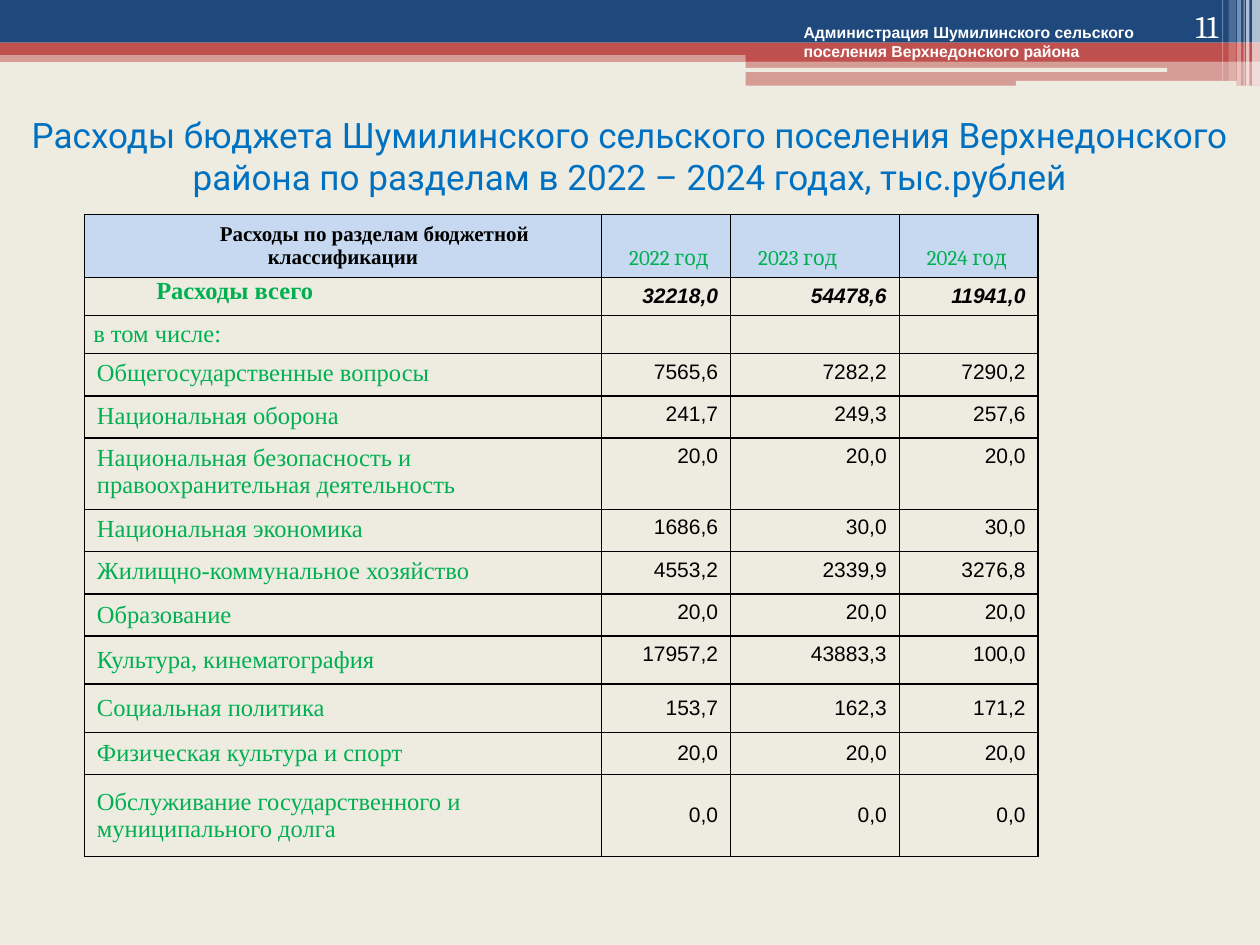
from lxml.etree import SubElement
from pptx import Presentation
from pptx.dml.color import RGBColor
from pptx.enum.shapes import MSO_SHAPE
from pptx.enum.text import MSO_ANCHOR, PP_ALIGN
from pptx.oxml import parse_xml
from pptx.oxml.ns import nsdecls, qn
from pptx.util import Cm, Pt

NAVY = RGBColor(0x1F, 0x49, 0x7D)
RED = RGBColor(0xC0, 0x50, 0x4D)
CREAM = RGBColor(0xEE, 0xEC, 0xE1)
WHITE = RGBColor(0xFF, 0xFF, 0xFF)
BLACK = RGBColor(0, 0, 0)
BLUE = RGBColor(0x00, 0x70, 0xC0)
GREEN = RGBColor(0x00, 0xB0, 0x50)
PALE_BLUE = RGBColor(0xC6, 0xD9, 0xF1)

TOP, MIDDLE, BOTTOM = MSO_ANCHOR.TOP, MSO_ANCHOR.MIDDLE, MSO_ANCHOR.BOTTOM
LEFT, CENTER, RIGHT = PP_ALIGN.LEFT, PP_ALIGN.CENTER, PP_ALIGN.RIGHT
RECT, ROUND = MSO_SHAPE.RECTANGLE, MSO_SHAPE.ROUNDED_RECTANGLE
SERIF, SANS = "Times New Roman", "Arial"

TITLE = ("Расходы бюджета Шумилинского сельского поселения Верхнедонского "
         "района по разделам в 2022 – 2024 годах, тыс.рублей")
OWNER = "Администрация Шумилинского сельского поселения Верхнедонского района"
PAGE = "11"

# shape, left, top, width, height (cm), colour, opacity %
BANDS = [
    (RECT, 0, 1.02, 25.4, 0.23, RED, 50),
    (RECT, 0, 0, 25.4, 0.86, NAVY, 100),
    (RECT, 0, 0.86, 25.4, 0.25, RED, 100),
    (RECT, 15.03, 0.99, 10.37, 0.25, RED, 100),
    (RECT, 15.03, 1.23, 10.37, 0.5, RED, 50),
    (ROUND, 15.02, 1.37, 8.51, 0.08, CREAM, 100),
    (ROUND, 20.48, 1.63, 4.45, 0.1, CREAM, 100),
]
# left, width, height (cm), opacity %
STRIPES = [
    (25.24, 0.16, 1.73, 65), (25.12, 0.07, 1.73, 65), (25.07, 0.02, 1.73, 60),
    (24.94, 0.08, 1.73, 40), (24.77, 0.15, 1.63, 20), (24.64, 0.02, 1.63, 30),
]

HEADER = ["Расходы по разделам бюджетной классификации",
          "2022 год", "2023 год", "2024 год"]
TOTAL = ["Расходы всего", "32218,0", "54478,6", "11941,0"]
INCLUDING = "в том числе:"
# row height (cm), label anchor, value anchor, label, values by year
SECTIONS = [
    (0.85, TOP, TOP, "Общегосударственные вопросы", "7565,6", "7282,2", "7290,2"),
    (0.85, TOP, TOP, "Национальная оборона", "241,7", "249,3", "257,6"),
    (1.43, TOP, TOP, "Национальная безопасность и правоохранительная деятельность",
     "20,0", "20,0", "20,0"),
    (0.85, TOP, TOP, "Национальная экономика", "1686,6", "30,0", "30,0"),
    (0.85, TOP, TOP, "Жилищно-коммунальное хозяйство", "4553,2", "2339,9", "3276,8"),
    (0.85, MIDDLE, TOP, "Образование", "20,0", "20,0", "20,0"),
    (0.97, MIDDLE, TOP, "Культура, кинематография", "17957,2", "43883,3", "100,0"),
    (0.97, MIDDLE, MIDDLE, "Социальная политика", "153,7", "162,3", "171,2"),
    (0.85, MIDDLE, MIDDLE, "Физическая культура и спорт", "20,0", "20,0", "20,0"),
    (1.65, MIDDLE, MIDDLE, "Обслуживание государственного и муниципального долга",
     "0,0", "0,0", "0,0"),
]
COL_WIDTHS = [10.43, 2.6, 3.4, 2.8]
ROW_HEIGHTS = [1.27, 0.77, 0.77] + [row[0] for row in SECTIONS]


def write(tf, text, size, font, color, align=LEFT, bold=False, italic=False):
    tf.text = text
    p = tf.paragraphs[0]
    p.alignment = align
    for r in p.runs:
        r.font.size, r.font.name = Pt(size), font
        r.font.bold, r.font.italic = bold, italic
        r.font.color.rgb = color
    return p


def indent(p, left=0, first=0):
    pPr = p._p.get_or_add_pPr()
    pPr.set("marL", str(Cm(left)))
    pPr.set("indent", str(Cm(first)))


def add_band(shapes, kind, left, top, width, height, color, opacity):
    sp = shapes.add_shape(kind, Cm(left), Cm(top), Cm(width), Cm(height))
    sp.shadow.inherit = False
    sp.line.fill.background()
    sp.fill.solid()
    sp.fill.fore_color.rgb = color
    if opacity < 100:
        clr = sp._element.spPr.find(".//" + qn("a:srgbClr"))
        SubElement(clr, qn("a:alpha"), val=str(opacity * 1000))


def add_text(shapes, left, top, width, height, anchor, *style):
    box = shapes.add_textbox(Cm(left), Cm(top), Cm(width), Cm(height))
    tf = box.text_frame
    tf.word_wrap = True
    tf.vertical_anchor = anchor
    write(tf, *style)


def add_borders(cell):
    tcPr = cell._tc.get_or_add_tcPr()
    for i, side in enumerate(("lnL", "lnR", "lnT", "lnB")):
        tcPr.insert(i, parse_xml(
            f'<a:{side} {nsdecls("a")} w="12700"><a:solidFill>'
            f'<a:srgbClr val="{BLACK}"/></a:solidFill></a:{side}>'))


def fill_header(table):
    for c, text in enumerate(HEADER):
        cell = table.cell(0, c)
        cell.fill.solid()
        cell.fill.fore_color.rgb = PALE_BLUE
        if c == 0:
            cell.vertical_anchor = MIDDLE
            p = write(cell.text_frame, text, 12, SERIF, BLACK, CENTER, True)
            indent(p, first=1.27)
        else:
            cell.vertical_anchor = BOTTOM
            p = write(cell.text_frame, text, 12, "Cambria", GREEN)
            p.space_before = Pt(3)
            indent(p, left=0.3)


def fill_row(table, row, label, values, label_anchor, value_anchor, total=False):
    cell = table.cell(row, 0)
    cell.vertical_anchor = label_anchor
    p = write(cell.text_frame, label, 14, SERIF, GREEN, bold=total)
    for c, text in enumerate(values, 1):
        value = table.cell(row, c)
        value.vertical_anchor = value_anchor
        write(value.text_frame, text, 12, SANS, BLACK, RIGHT, total, total)
    return cell, p


def add_budget_table(shapes):
    table = shapes.add_table(len(ROW_HEIGHTS), len(COL_WIDTHS), Cm(1.7), Cm(4.32),
                             Cm(sum(COL_WIDTHS)), Cm(sum(ROW_HEIGHTS))).table
    table.first_row = table.horz_banding = False
    for col, width in zip(table.columns, COL_WIDTHS):
        col.width = Cm(width)
    for row, height in zip(table.rows, ROW_HEIGHTS):
        row.height = Cm(height)
    for cell in table.iter_cells():
        cell.fill.background()
        add_borders(cell)

    fill_header(table)
    total, total_p = fill_row(table, 1, TOTAL[0], TOTAL[1:], TOP, MIDDLE, total=True)
    indent(total_p, first=1.27)
    including, including_p = fill_row(table, 2, INCLUDING, [], MIDDLE, MIDDLE)
    including_p.space_after = Pt(6)
    for cell in (total, including):
        cell.margin_left = cell.margin_right = Cm(0.18)
        cell.margin_top = cell.margin_bottom = 0
    for c in range(1, len(COL_WIDTHS)):
        p = table.cell(2, c).text_frame.paragraphs[0]
        SubElement(p._p, qn("a:endParaRPr"), sz="1200")

    for r, (_, label_anchor, value_anchor, label, *values) in enumerate(SECTIONS, 3):
        _, p = fill_row(table, r, label, values, label_anchor, value_anchor)
    p.space_after = Pt(6)


def main():
    prs = Presentation()
    prs.slide_width, prs.slide_height = Cm(25.4), Cm(19.05)
    slide = prs.slides.add_slide(prs.slide_layouts[6])
    slide.background.fill.solid()
    slide.background.fill.fore_color.rgb = CREAM
    shapes = slide.shapes

    for band in BANDS:
        add_band(shapes, *band)
    for left, width, height, opacity in STRIPES:
        add_band(shapes, RECT, left, 0, width, height, WHITE, opacity)

    add_text(shapes, 0, 2.13, 25.4, 2, MIDDLE, TITLE, 20, "Roboto", BLUE, CENTER)
    add_text(shapes, 22.7, 0, 2.11, 1.02, BOTTOM, PAGE, 18, "Cambria", WHITE, RIGHT)
    add_text(shapes, 15.95, 0.33, 7.9, 1.02, TOP, OWNER, 9, SANS, WHITE, LEFT, True)
    add_budget_table(shapes)
    prs.save("out.pptx")


if __name__ == "__main__":
    main()
